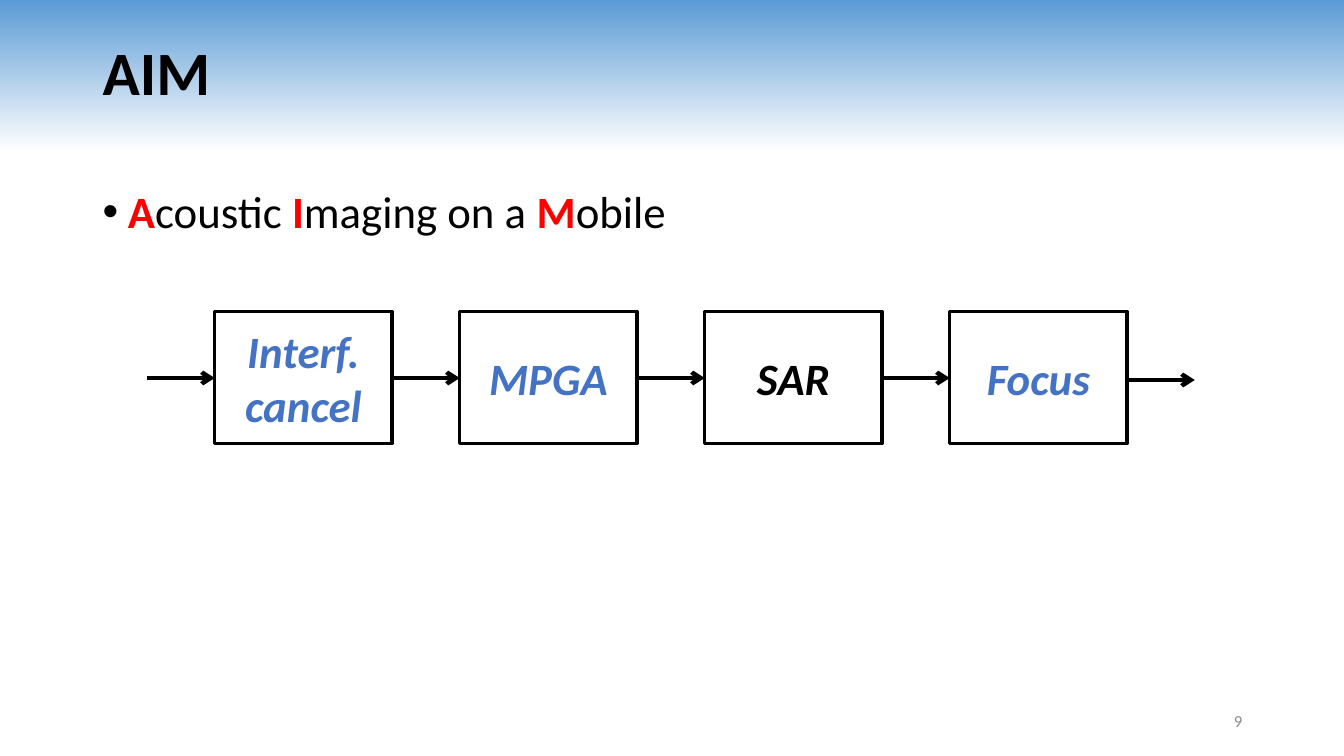
from lxml import etree
from pptx import Presentation
from pptx.dml.color import RGBColor
from pptx.enum import shapes, text
from pptx.oxml.ns import qn
from pptx.util import Inches, Pt

COLORS = {"black": "000000", "white": "FFFFFF", "sky": "5B9BD5",
          "red": "FF0000", "blue": "4472C4", "gray": "8C8C8C"}
FONT = "Calibri"

TITLE = "AIM"
EXPANSION = [("A", "coustic "), ("I", "maging on a "), ("M", "obile")]
STAGES = [("Interf. cancel", "blue"), ("MPGA", "blue"),
          ("SAR", "black"), ("Focus", "blue")]
PAGE = "9"

STAGE_LEFT, STAGE_TOP, STAGE_W, STAGE_H = 2.13, 3.09, 1.76, 1.31
PITCH = 2.43
GAP = PITCH - STAGE_W
ARROW_Y, OUTPUT_Y = 3.75, 3.77


def rgb(name):
    return RGBColor.from_string(COLORS[name])


def style(font, size, color, bold=False, italic=False):
    font.name, font.size, font.bold, font.italic = FONT, Pt(size), bold, italic
    font.color.rgb = rgb(color)


def add_text(slide, left, top, width, height, anchor):
    """Add a wrapping text box and return its first paragraph."""
    frame = slide.shapes.add_textbox(
        Inches(left), Inches(top), Inches(width), Inches(height)).text_frame
    frame.word_wrap = True
    frame.vertical_anchor = anchor
    return frame.paragraphs[0]


def add_bullet(paragraph):
    props = paragraph._p.get_or_add_pPr()
    props.set("marL", str(Inches(0.25)))
    props.set("indent", str(-Inches(0.25)))
    color = etree.SubElement(props, qn("a:buClr"))
    etree.SubElement(color, qn("a:srgbClr"), val=COLORS["black"])
    etree.SubElement(props, qn("a:buFont"), typeface="Arial")
    etree.SubElement(props, qn("a:buChar"), char="•")


def add_stage(slide, left, label, color):
    stage = slide.shapes.add_shape(
        shapes.MSO_SHAPE.RECTANGLE, Inches(left), Inches(STAGE_TOP),
        Inches(STAGE_W), Inches(STAGE_H))
    stage.shadow.inherit = False
    stage.fill.background()
    stage.line.color.rgb = rgb("black")
    stage.line.width = Pt(2.5)
    stage.text_frame.word_wrap = True
    stage.text_frame.vertical_anchor = text.MSO_ANCHOR.MIDDLE
    paragraph = stage.text_frame.paragraphs[0]
    paragraph.text = label
    paragraph.alignment = text.PP_ALIGN.CENTER
    style(paragraph.font, 32, color, bold=True, italic=True)


def add_arrow(slide, left, y):
    arrow = slide.shapes.add_connector(
        shapes.MSO_CONNECTOR.STRAIGHT, Inches(left), Inches(y),
        Inches(left + GAP), Inches(y))
    arrow.line.color.rgb = rgb("black")
    arrow.line.width = Pt(3)
    etree.SubElement(arrow.line._get_or_add_ln(), qn("a:tailEnd"), type="arrow")
    etree.SubElement(arrow._element.spPr, qn("a:effectLst"))


def main():
    deck = Presentation()
    deck.slide_width, deck.slide_height = Inches(13.33), Inches(7.5)
    slide = deck.slides.add_slide(deck.slide_layouts[6])

    backdrop = slide.background.fill
    backdrop.gradient()
    backdrop.gradient_angle = 90
    for stop, (position, color) in zip(backdrop.gradient_stops,
                                       [(0.8, "white"), (1, "sky")]):
        stop.position = position
        stop.color.rgb = rgb(color)

    title = add_text(slide, 0.92, 0.02, 11.5, 1.45, text.MSO_ANCHOR.MIDDLE)
    title.text = TITLE
    title.line_spacing = 0.9
    style(title.font, 44, "black", bold=True)

    expansion = add_text(slide, 0.92, 1.83, 11.5, 4.86, text.MSO_ANCHOR.TOP)
    expansion.line_spacing = 0.9
    expansion.space_before = Pt(10)
    add_bullet(expansion)
    for initial, rest in EXPANSION:
        for part, color, bold in [(initial, "red", True), (rest, "black", False)]:
            run = expansion.add_run()
            run.text = part
            style(run.font, 32, color, bold)

    page = add_text(slide, 9.42, 6.95, 3, 0.4, text.MSO_ANCHOR.MIDDLE)
    page.text = PAGE
    page.alignment = text.PP_ALIGN.RIGHT
    style(page.font, 12, "gray")

    for i, (label, color) in enumerate(STAGES):
        left = STAGE_LEFT + i * PITCH
        add_stage(slide, left, label, color)
        add_arrow(slide, left - GAP, ARROW_Y)
    add_arrow(slide, left + STAGE_W, OUTPUT_Y)

    deck.save("out.pptx")


if __name__ == "__main__":
    main()
